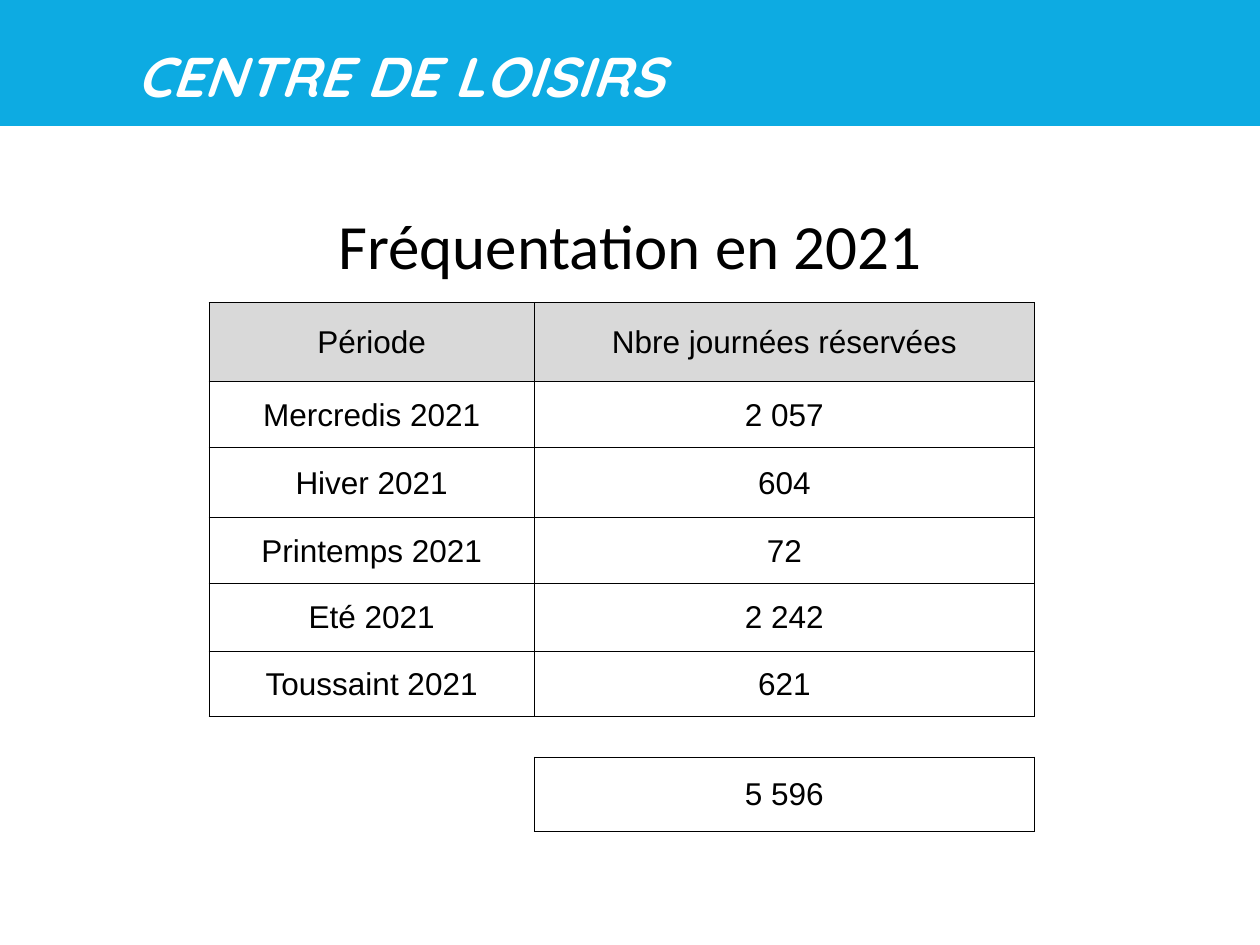
import dataclasses

import pptx
import pptx.dml.color
import pptx.enum.text
import pptx.oxml
import pptx.util
from pptx.util import Inches

ALIGN = pptx.enum.text.PP_ALIGN
ANCHOR = pptx.enum.text.MSO_ANCHOR


@dataclasses.dataclass(frozen=True)
class Theme:
    """Colours, fonts and type sizes of the slide."""
    banner: str = "0DABE2"
    header: str = "D9D9D9"
    ink: str = "000000"
    light: str = "FFFFFF"
    banner_font: str = "Quicksand"
    title_font: str = "Calibri"
    table_font: str = "Arial"
    banner_size: int = 32
    title_size: int = 36
    table_size: int = 18
    border: float = 0.5


THEME = Theme()
BANNER_OUTLINE = [
    (9.09, 0), (0, 0), (0, 1.31), (9.09, 1.31), (9.61, 1.31), (9.88, 1.29),
    (9.98, 1.23), (10, 1.12), (10, 0.2), (9.98, 0.08), (9.88, 0.02), (9.61, 0),
]
ATTENDANCE = [
    ("Période", "Nbre journées réservées"),
    ("Mercredis 2021", "2 057"),
    ("Hiver 2021", "604"),
    ("Printemps 2021", "72"),
    ("Eté 2021", "2 242"),
    ("Toussaint 2021", "621"),
    ("", ""),
    ("", "5 596"),
]
COLUMN_WIDTHS = [2.58, 3.97]
ROW_HEIGHTS = [0.63, 0.52, 0.56, 0.52, 0.54, 0.52, 0.32, 0.59]


def rgb(code):
    """Return the colour object for a hex code."""
    return pptx.dml.color.RGBColor.from_string(code)


def write(paragraph, text, font, size, color, emphasis=False):
    """Add one centred, formatted run to a paragraph."""
    paragraph.alignment = ALIGN.CENTER
    run = paragraph.add_run()
    run.text = text
    run.font.name = font
    run.font.size = pptx.util.Pt(size)
    run.font.color.rgb = rgb(color)
    run.font.bold = run.font.italic = emphasis


def set_insets(holder, left, top, right, bottom):
    """Set the inner margins of a text frame or cell, in inches."""
    holder.margin_left, holder.margin_top = Inches(left), Inches(top)
    holder.margin_right, holder.margin_bottom = Inches(right), Inches(bottom)


def add_banner(slide):
    """Draw the band with its rounded right end."""
    builder = slide.shapes.build_freeform(*BANNER_OUTLINE[0], scale=Inches(1))
    builder.add_line_segments(BANNER_OUTLINE[1:], close=True)
    banner = builder.convert_to_shape()
    banner.shadow.inherit = False
    banner.fill.solid()
    banner.fill.fore_color.rgb = rgb(THEME.banner)
    banner.line.fill.background()


def add_banner_heading(slide, text):
    """Write the heading over the band."""
    heading = slide.shapes.add_textbox(0, Inches(0.37), Inches(6.1), Inches(0.5))
    frame = heading.text_frame
    frame.word_wrap = True
    frame.vertical_anchor = ANCHOR.BOTTOM
    set_insets(frame, 0.25, 0.01, 0, 0)
    frame.paragraphs[0].line_spacing = 0.9
    write(frame.paragraphs[0], text, THEME.banner_font, THEME.banner_size, THEME.light, True)


def set_title(slide, text):
    """Place and fill the title placeholder."""
    title = slide.shapes.title
    title.left, title.top = Inches(0.69), Inches(1.25)
    title.width, title.height = Inches(8.62), Inches(1.45)
    title.text_frame.vertical_anchor = ANCHOR.MIDDLE
    paragraph = title.text_frame.paragraphs[0]
    paragraph.line_spacing = 0.9
    write(paragraph, text, THEME.title_font, THEME.title_size, THEME.ink)


def set_borders(cell, sides):
    """Draw the named sides of a cell and hide the others."""
    properties = cell._tc.get_or_add_tcPr()
    namespace = "http://schemas.openxmlformats.org/drawingml/2006/main"
    width = pptx.util.Pt(THEME.border)
    ink = f'<a:solidFill><a:srgbClr val="{THEME.ink}"/></a:solidFill>'
    for side in "LRTB":
        paint = ink if side in sides else "<a:noFill/>"
        properties.append(pptx.oxml.parse_xml(
            f'<a:ln{side} xmlns:a="{namespace}" w="{width}">{paint}</a:ln{side}>'))


def border_sides(row, column):
    """Box every filled cell and the edges that empty cells share with one."""
    if ATTENDANCE[row][column]:
        return "LRTB"
    above = "T" if ATTENDANCE[row - 1][column] else ""
    below = "B" if row + 1 < len(ATTENDANCE) and ATTENDANCE[row + 1][column] else ""
    beside = "R" if column == 0 and ATTENDANCE[row][1] else ""
    return above + below + beside


def add_attendance_table(slide):
    """Build the table of booked days with its detached total."""
    table = slide.shapes.add_table(
        len(ATTENDANCE), len(COLUMN_WIDTHS), Inches(1.66), Inches(2.4),
        Inches(sum(COLUMN_WIDTHS)), Inches(sum(ROW_HEIGHTS))).table
    table.first_row = table.horz_banding = False
    for column, width in zip(table.columns, COLUMN_WIDTHS):
        column.width = Inches(width)
    for row, height in zip(table.rows, ROW_HEIGHTS):
        row.height = Inches(height)
    for row, entries in enumerate(ATTENDANCE):
        for column, entry in enumerate(entries):
            cell = table.cell(row, column)
            set_insets(cell, 0.01, 0.01, 0.01, 0)
            cell.vertical_anchor = ANCHOR.MIDDLE
            set_borders(cell, border_sides(row, column))
            if row == 0:
                cell.fill.solid()
                cell.fill.fore_color.rgb = rgb(THEME.header)
            else:
                cell.fill.background()
            if entry:
                write(cell.text_frame.paragraphs[0], entry,
                      THEME.table_font, THEME.table_size, THEME.ink)


def main():
    """Build and save the slide."""
    deck = pptx.Presentation()
    deck.slide_width, deck.slide_height = Inches(10), Inches(7.5)
    slide = deck.slides.add_slide(deck.slide_layouts[5])
    add_banner(slide)
    set_title(slide, "Fréquentation en 2021")
    add_attendance_table(slide)
    add_banner_heading(slide, "CENTRE DE LOISIRS")
    deck.save("out.pptx")


if __name__ == "__main__":
    main()
